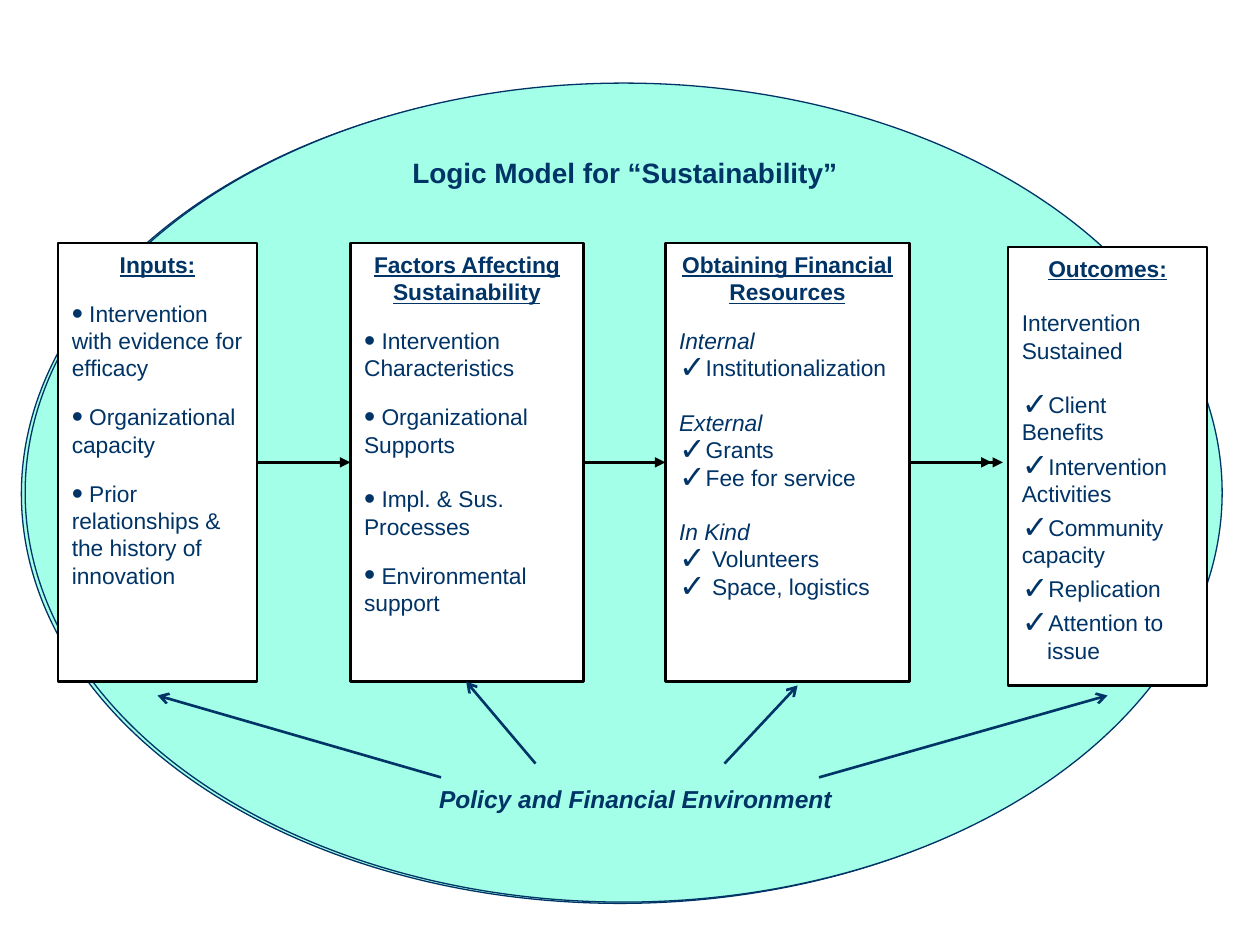
from dataclasses import dataclass

from lxml import etree
from pptx import Presentation
from pptx.dml.color import RGBColor
from pptx.enum import shapes, text
from pptx.oxml import ns
from pptx.util import Inches, Pt

NAVY = RGBColor(0x00, 0x33, 0x66)
MINT = RGBColor(0xA3, 0xFF, 0xE7)
WHITE = RGBColor(0xFF, 0xFF, 0xFF)
BLACK = RGBColor(0x00, 0x00, 0x00)

FONT = "Arial"
LINE_PITCH = 15.6
SMALL_GAP = 12.4
ITEM_GAP = 3.9
DOT = "•"
CHECK = "✓"


@dataclass
class Entry:
    wording: str
    bullet: str = ""
    before: float = 0
    italic: bool = False
    hanging: float = 0


@dataclass
class Stage:
    heading: str
    left: float
    top: float
    width: float
    entries: list[Entry]


@dataclass
class Arrow:
    start: tuple[float, float]
    end: tuple[float, float]
    color: RGBColor
    head: str


STAGES = [
    Stage("Inputs:", 0.46, 1.93, 1.58, [
        Entry(" Intervention with evidence for efficacy", DOT, SMALL_GAP),
        Entry(" Organizational capacity", DOT, SMALL_GAP),
        Entry(" Prior relationships & the history of innovation", DOT, SMALL_GAP),
    ]),
    Stage("Factors Affecting Sustainability", 2.78, 1.93, 1.85, [
        Entry(" Intervention Characteristics", DOT, SMALL_GAP),
        Entry(" Organizational Supports", DOT, SMALL_GAP),
        Entry(" Impl. & Sus. Processes", DOT, LINE_PITCH),
        Entry(" Environmental support", DOT, SMALL_GAP),
    ]),
    Stage("Obtaining Financial Resources", 5.28, 1.93, 1.94, [
        Entry("Internal", before=SMALL_GAP, italic=True),
        Entry("Institutionalization", CHECK),
        Entry("External", before=LINE_PITCH, italic=True),
        Entry("Grants", CHECK),
        Entry("Fee for service", CHECK),
        Entry("In Kind", before=LINE_PITCH, italic=True),
        Entry(" Volunteers", CHECK),
        Entry(" Space, logistics", CHECK),
    ]),
    Stage("Outcomes:", 8, 1.96, 1.58, [
        Entry("Intervention", before=LINE_PITCH),
        Entry("Sustained"),
        Entry("Client Benefits", CHECK, LINE_PITCH),
        Entry("Intervention Activities", CHECK, ITEM_GAP),
        Entry("Community capacity", CHECK, ITEM_GAP),
        Entry("Replication", CHECK, ITEM_GAP),
        Entry("Attention to issue", CHECK, ITEM_GAP, hanging=0.2),
    ]),
]

FLOW_Y = 3.67
FLOW_SPANS = [(7.22, 7.87), (2.04, 2.78), (4.63, 5.28), (7.22, 7.96)]
INFLUENCES = [
    ((3.5, 6.17), (1.25, 5.52)),
    ((4.25, 6.06), (3.7, 5.41)),
    ((5.75, 6.06), (6.33, 5.44)),
    ((6.5, 6.17), (8.79, 5.52)),
]
ARROWS = [
    Arrow((left, FLOW_Y), (right, FLOW_Y), BLACK, "triangle")
    for left, right in FLOW_SPANS
] + [Arrow(start, end, NAVY, "arrow") for start, end in INFLUENCES]


def style_runs(paragraph, size: float, bold=False, italic=False, underline=False) -> None:
    for run in paragraph.runs:
        font = run.font
        font.name = FONT
        font.size = Pt(size)
        font.bold = bold
        font.italic = italic
        font.underline = underline
        font.color.rgb = NAVY


def add_panel(slide, preset, box: tuple, fill: RGBColor, line=None, weight=0.75):
    panel = slide.shapes.add_shape(preset, *map(Inches, box))
    panel.shadow.inherit = False
    panel.fill.solid()
    panel.fill.fore_color.rgb = fill
    if line is None:
        panel.line.fill.background()
    else:
        panel.line.color.rgb = line
        panel.line.width = Pt(weight)
    return panel


def add_bullet(paragraph, entry: Entry) -> None:
    properties = paragraph._p.get_or_add_pPr()
    properties.set("marL", str(Inches(entry.hanging)))
    properties.set("indent", str(-Inches(entry.hanging)))
    etree.SubElement(properties, ns.qn("a:buSzPct"), val="140000")
    etree.SubElement(properties, ns.qn("a:buFont"), typeface=FONT)
    etree.SubElement(properties, ns.qn("a:buChar"), char=entry.bullet)


def add_stage(slide, stage: Stage) -> None:
    box = (stage.left, stage.top, stage.width, 3.48)
    panel = add_panel(slide, shapes.MSO_SHAPE.RECTANGLE, box, WHITE, BLACK, 1.5)
    frame = panel.text_frame
    frame.word_wrap = True
    frame.vertical_anchor = text.MSO_ANCHOR.TOP
    frame.margin_left = frame.margin_right = Inches(0.11)
    frame.margin_top = frame.margin_bottom = Inches(0.06)
    frame.text = stage.heading
    heading = frame.paragraphs[0]
    heading.alignment = text.PP_ALIGN.CENTER
    heading.line_spacing = Pt(LINE_PITCH)
    style_runs(heading, 13, bold=True, underline=True)
    for entry in stage.entries:
        paragraph = frame.add_paragraph()
        paragraph.text = entry.wording
        paragraph.alignment = text.PP_ALIGN.LEFT
        paragraph.line_spacing = Pt(LINE_PITCH)
        paragraph.space_before = Pt(entry.before)
        style_runs(paragraph, 13, italic=entry.italic)
        if entry.bullet:
            add_bullet(paragraph, entry)


def add_arrow(slide, arrow: Arrow) -> None:
    connector = slide.shapes.add_connector(
        shapes.MSO_CONNECTOR.STRAIGHT, *map(Inches, arrow.start + arrow.end)
    )
    connector.line.color.rgb = arrow.color
    connector.line.width = Pt(1.5)
    etree.SubElement(connector.line._get_or_add_ln(), ns.qn("a:tailEnd"), type=arrow.head)
    etree.SubElement(connector._element.spPr, ns.qn("a:effectLst"))


def fill_label(label, wording: str, size: float, anchor, italic=False) -> None:
    frame = label.text_frame
    frame.text = wording
    frame.word_wrap = True
    frame.auto_size = text.MSO_AUTO_SIZE.NONE
    frame.vertical_anchor = anchor
    frame.paragraphs[0].alignment = text.PP_ALIGN.CENTER
    style_runs(frame.paragraphs[0], size, bold=True, italic=italic)


def place_title(slide) -> None:
    title = slide.shapes.title
    title.left, title.top, title.width, title.height = map(Inches, (2.67, 1.16, 4.58, 0.42))
    title.fill.solid()
    title.fill.fore_color.rgb = MINT
    fill_label(title, "Logic Model for “Sustainability”", 16, text.MSO_ANCHOR.MIDDLE)
    slide.shapes.element.append(title.element)


def main() -> None:
    deck = Presentation()
    deck.slide_width, deck.slide_height = Inches(10), Inches(7.5)
    slide = deck.slides.add_slide(deck.slide_layouts[5])
    for left, top in ((0.17, 0.67), (0.2, 0.66)):
        add_panel(slide, shapes.MSO_SHAPE.OVAL, (left, top, 9.5, 6.5), MINT, NAVY)
    for stage in STAGES:
        add_stage(slide, stage)
    environment = add_panel(slide, shapes.MSO_SHAPE.RECTANGLE, (2.92, 6.17, 4.25, 0.49), MINT)
    fill_label(environment, "Policy and Financial Environment", 14, text.MSO_ANCHOR.TOP, italic=True)
    place_title(slide)
    for arrow in ARROWS:
        add_arrow(slide, arrow)
    deck.save("out.pptx")


if __name__ == "__main__":
    main()
